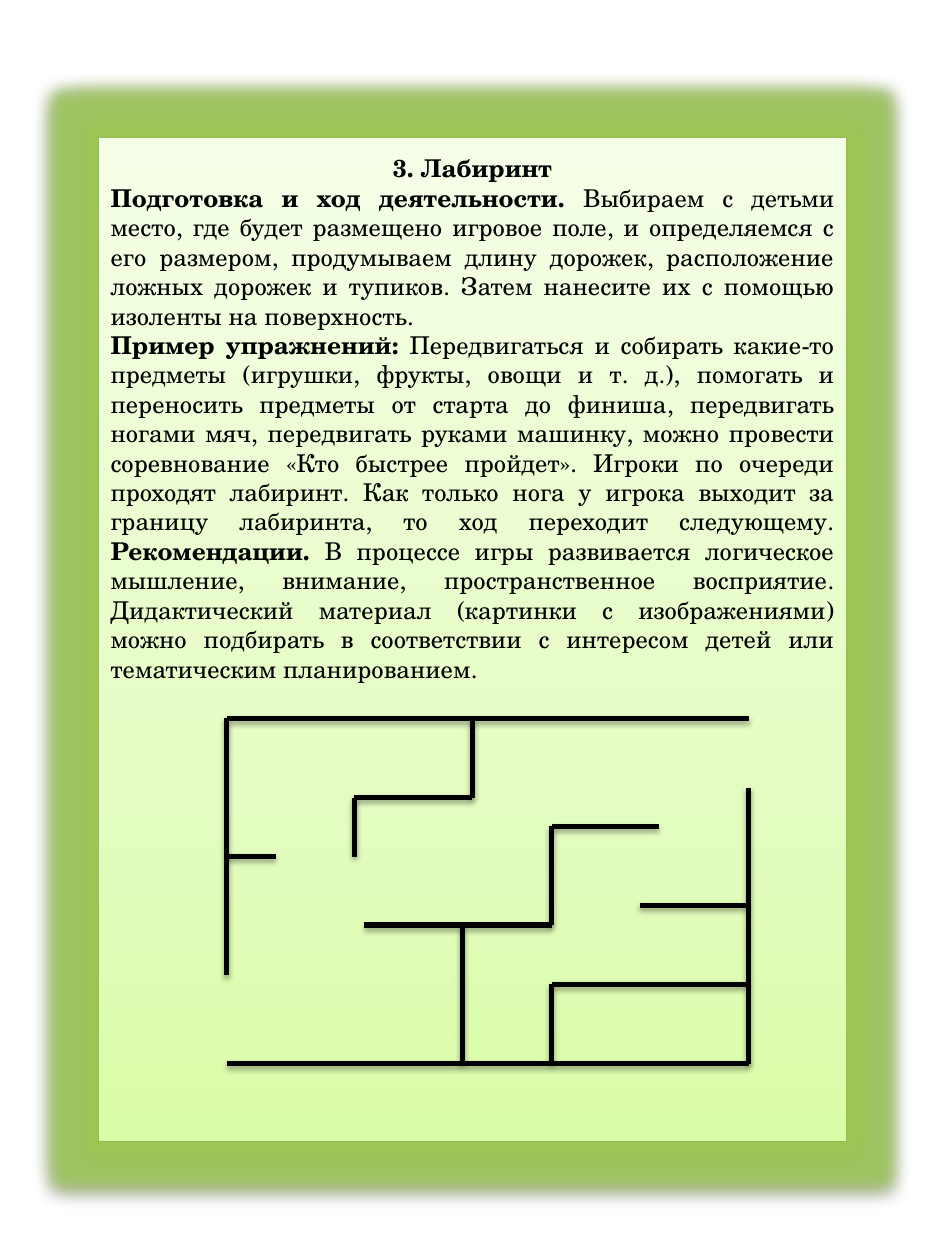
from pptx import Presentation
from pptx import util as u
from pptx.dml.color import RGBColor
from pptx.enum import shapes, text
from pptx.oxml import parse_xml
from pptx.oxml.ns import nsdecls, qn

COLORS = {"ink": "000000", "edge": "98B955", "glow": "9BC850",
          "bottom": "DAFDA7", "middle": "E4FCC2", "top": "F5FFE7"}
FONT = {"name": "TeX Gyre Schola", "size": u.Pt(14)}
PANEL = (1.98, 2.77, 15.09, 20.24)
TITLE = "3. Лабиринт"
BODY = [
    [("Подготовка и ход деятельности. ", True),
     ("Выбираем с детьми место, где будет размещено игровое поле, и определяемся "
      "с его размером, продумываем длину дорожек, расположение ложных дорожек и "
      "тупиков. Затем нанесите их с помощью изоленты на поверхность.", False)],
    [("Пример упражнений: ", True),
     ("Передвигаться и собирать какие-то предметы (игрушки, фрукты, овощи и т. д.), "
      "помогать и переносить предметы от старта до финиша, передвигать ногами мяч, "
      "передвигать руками машинку, можно провести соревнование «Кто быстрее пройдет». "
      "Игроки по очереди проходят лабиринт. Как только нога у игрока выходит за "
      "границу лабиринта, то ход переходит следующему. ", False),
     ("Рекомендации. ", True),
     ("В процессе игры развивается логическое мышление, внимание, пространственное "
      "восприятие. Дидактический материал (картинки с изображениями) можно подбирать "
      "в соответствии с интересом детей или тематическим планированием.", False)],
]
MAZE_W, MAZE_H = 10.52, 6.96
WALLS = [
    (0, 0, 0, 5.18), (MAZE_W, 0, 0, 0), (MAZE_W, 1.4, MAZE_W, MAZE_H),
    (MAZE_W, MAZE_H, 0, MAZE_H), (4.75, 4.17, 4.75, MAZE_H),
    (6.55, 4.17, 2.77, 4.17), (6.55, 2.18, 6.55, 4.17), (8.71, 2.18, 6.55, 2.18),
    (MAZE_W, 3.78, 8.33, 3.78), (MAZE_W, 5.36, 6.55, 5.36),
    (6.55, 5.36, 6.55, MAZE_H), (2.57, 2.79, 2.57, 1.6), (4.95, 0, 4.95, 1.6),
    (4.95, 1.6, 2.57, 1.6), (0.99, 2.79, 0, 2.79),
]


def rgb(key):
    """Return a palette colour."""
    return RGBColor.from_string(COLORS[key])


def add_effects(sp, dist, alpha, glow=0):
    """Give a shape a downward shadow and, if asked, a glow of some points."""
    halo = (f'<a:glow rad="{u.Pt(glow)}"><a:srgbClr val="{COLORS["glow"]}">'
            '<a:alpha val="80000"/></a:srgbClr></a:glow>') if glow else ""
    sp._element.spPr.append(parse_xml(
        f'<a:effectLst {nsdecls("a")}>{halo}<a:outerShdw blurRad="{u.Pt(3.1)}" '
        f'dist="{u.Pt(dist)}" dir="5400000" rotWithShape="0">'
        f'<a:srgbClr val="{COLORS["ink"]}"><a:alpha val="{alpha * 1000}"/>'
        '</a:srgbClr></a:outerShdw></a:effectLst>'))


def add_panel(s, x, y, w, h):
    """Draw the glowing green card in its box."""
    sp = s.shapes.add_shape(shapes.MSO_SHAPE.RECTANGLE, *map(u.Cm, (x, y, w, h)))
    sp.line.color.rgb, sp.line.width = rgb("edge"), u.Pt(0.75)
    stops = "".join(f'<a:gs pos="{pos * 1000}"><a:srgbClr val="{COLORS[key]}"/></a:gs>'
                    for pos, key in ((0, "bottom"), (35, "middle"), (100, "top")))
    sp._element.spPr.find(qn("a:ln")).addprevious(parse_xml(
        f'<a:gradFill {nsdecls("a")} rotWithShape="1"><a:gsLst>{stops}</a:gsLst>'
        '<a:lin ang="16200000" scaled="0"/></a:gradFill>'))
    add_effects(sp, 1.6, 38, glow=18)


def add_run(p, words, bold):
    """Add one run of the card's text."""
    r = p.add_run()
    r.text = words
    for key, value in {**FONT, "bold": bold}.items():
        setattr(r.font, key, value)
    r.font.color.rgb = rgb("ink")


def add_description(s, x, y, w, h):
    """Write the heading and the justified paragraphs."""
    tf = s.shapes.add_textbox(*map(u.Cm, (x, y, w, h))).text_frame
    tf.word_wrap = True
    p = tf.paragraphs[0]
    p.alignment = text.PP_ALIGN.CENTER
    add_run(p, TITLE, True)
    for runs in BODY:
        p = tf.add_paragraph()
        p.alignment = text.PP_ALIGN.JUSTIFY
        for words, bold in runs:
            add_run(p, words, bold)


def add_maze(s, x, y):
    """Draw the maze walls from the top left corner of their box."""
    for x1, y1, x2, y2 in WALLS:
        wall = s.shapes.add_connector(
            shapes.MSO_CONNECTOR.STRAIGHT,
            *map(u.Cm, (x + x1, y + y1, x + x2, y + y2)))
        wall.line.color.rgb, wall.line.width = rgb("ink"), u.Pt(3)
        add_effects(wall, 1.8, 35)


def add_game_card(s, x, y, w, h):
    """Place the card, its text and its maze in the box."""
    add_panel(s, x, y, w, h)
    add_description(s, x, y + 0.2, w, 11.02)
    add_maze(s, x + 2.59, y + 11.71)


def main():
    """Build and save the slide."""
    prs = Presentation()
    prs.slide_width, prs.slide_height = u.Cm(19.05), u.Cm(25.4)
    s = prs.slides.add_slide(prs.slide_layouts[6])
    add_game_card(s, *PANEL)
    prs.save("out.pptx")


if __name__ == "__main__":
    main()
